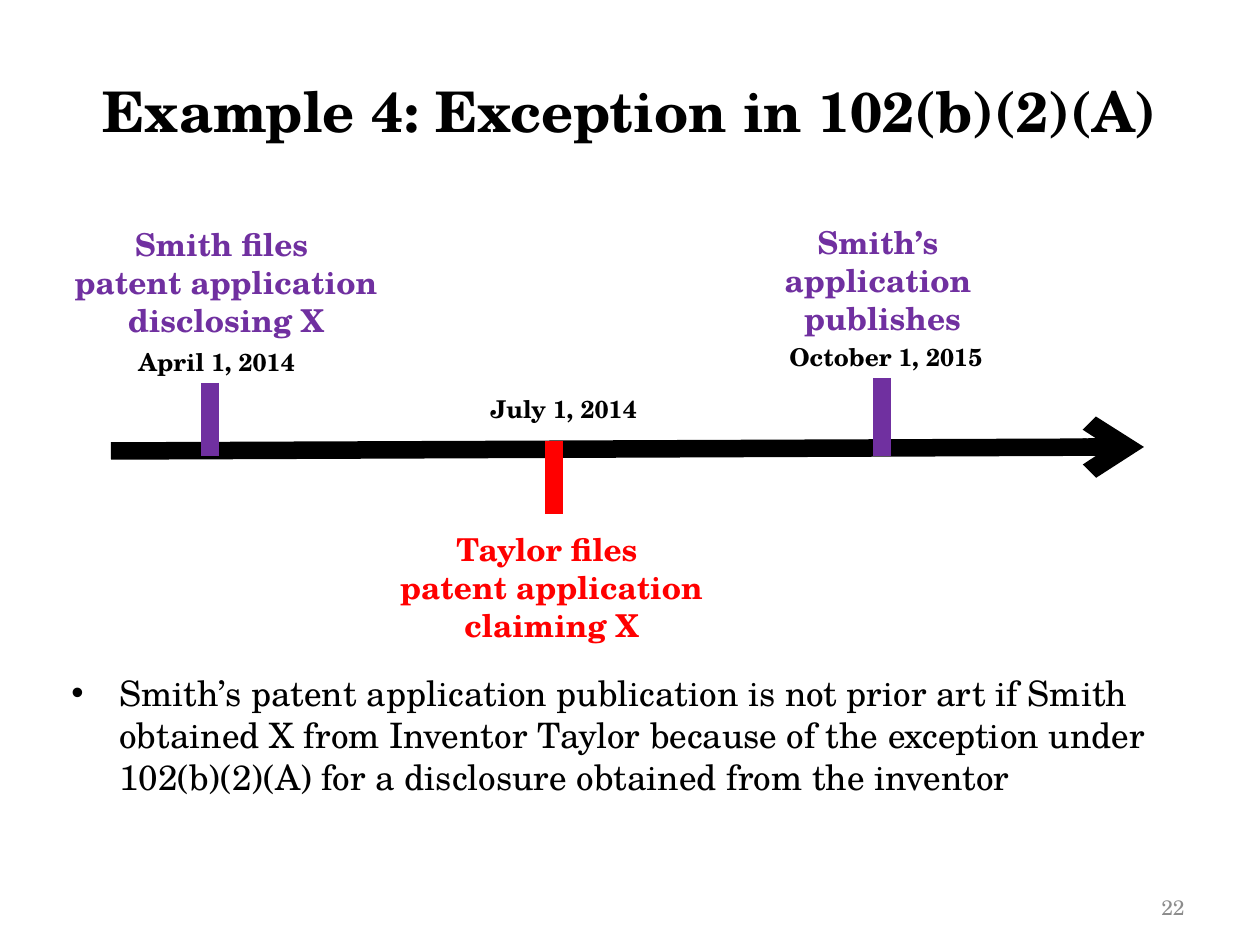
import pptx
import pptx.dml.color
import pptx.enum.shapes
import pptx.enum.text
import pptx.oxml.ns
import pptx.util
from lxml import etree

PX = 914400 / 126
FONT = "TeX Gyre Schola"
BLACK = pptx.dml.color.RGBColor(0x00, 0x00, 0x00)
GRAY = pptx.dml.color.RGBColor(0x8C, 0x8C, 0x8C)
PURPLE = pptx.dml.color.RGBColor(0x70, 0x30, 0xA0)
RED = pptx.dml.color.RGBColor(0xFF, 0x00, 0x00)
ALIGN = pptx.enum.text.PP_ALIGN
ANCHOR = pptx.enum.text.MSO_ANCHOR
qn = pptx.oxml.ns.qn

presentation = pptx.Presentation()
presentation.slide_width = pptx.util.Inches(10)
presentation.slide_height = pptx.util.Inches(7.5)
slide = presentation.slides.add_slide(presentation.slide_layouts[6])


def add_text(box, lines, size, color, bold=False, align=ALIGN.LEFT, anchor=ANCHOR.TOP):
    """Add a one-paragraph text box, with a line break between lines."""
    shape = slide.shapes.add_textbox(*[round(value * PX) for value in box])
    shape.text_frame.word_wrap = True
    shape.text_frame.vertical_anchor = anchor
    paragraph = shape.text_frame.paragraphs[0]
    paragraph.alignment = align
    for index, line in enumerate(lines):
        if index:
            paragraph.add_line_break()
        run = paragraph.add_run()
        run.text = line
        run.font.name = FONT
        run.font.size = pptx.util.Pt(size)
        run.font.bold = bold
        run.font.color.rgb = color
    return paragraph


def add_line(start_x, start_y, end_x, end_y, color):
    connector = slide.shapes.add_connector(
        pptx.enum.shapes.MSO_CONNECTOR.STRAIGHT,
        *[round(value * PX) for value in (start_x, start_y, end_x, end_y)])
    connector.line.width = pptx.util.Pt(10)
    connector.line.color.rgb = color
    etree.SubElement(connector._element.spPr, qn("a:effectLst"))
    return connector


add_text((0, 32, 1260, 157), ["Example 4: Exception in 102(b)(2)(A)"], 32, BLACK,
         bold=True, align=ALIGN.CENTER, anchor=ANCHOR.MIDDLE)
add_text((903, 861, 294, 65), ["22"], 12, GRAY, align=ALIGN.RIGHT, anchor=ANCHOR.BOTTOM)

timeline = add_line(111, 451, 1144, 447, BLACK)
etree.SubElement(timeline.line._get_or_add_ln(), qn("a:tailEnd"), type="arrow")

# label box, label lines, date box, date, marker x, marker top, marker bottom, color
events = [
    ((42, 219, 368, 127), ["Smith files ", "patent application disclosing X"],
     (126, 341, 220, 43), "April 1, 2014", 210, 383, 456, PURPLE),
    ((347, 524, 409, 127), ["Taylor files ", "patent application claiming X"],
     (478, 388, 194, 43), "July 1, 2014", 554, 441, 514, RED),
    ((678, 217, 409, 127), ["Smith’s ", "application ", "publishes"],
     (777, 336, 252, 43), "October 1, 2015", 882, 378, 456, PURPLE),
]
for label_box, label, date_box, date, x, top, bottom, color in events:
    add_line(x, top, x, bottom, color)
    add_text(label_box, label, 18, color, bold=True, align=ALIGN.CENTER)
    add_text(date_box, [date], 14, BLACK, bold=True)

conclusion = add_text((59, 665, 1158, 228), [
    "Smith’s patent application publication is not prior art if Smith obtained X "
    "from Inventor Taylor because of the exception under 102(b)(2)(A) for a "
    "disclosure obtained from the inventor"], 20, BLACK)
properties = conclusion._p.get_or_add_pPr()
indent = round(48 * PX)
properties.set("marL", str(indent))
properties.set("indent", str(-indent))
etree.SubElement(properties, qn("a:buFont"), typeface="Arial")
etree.SubElement(properties, qn("a:buChar"), char="•")

presentation.save("out.pptx")
